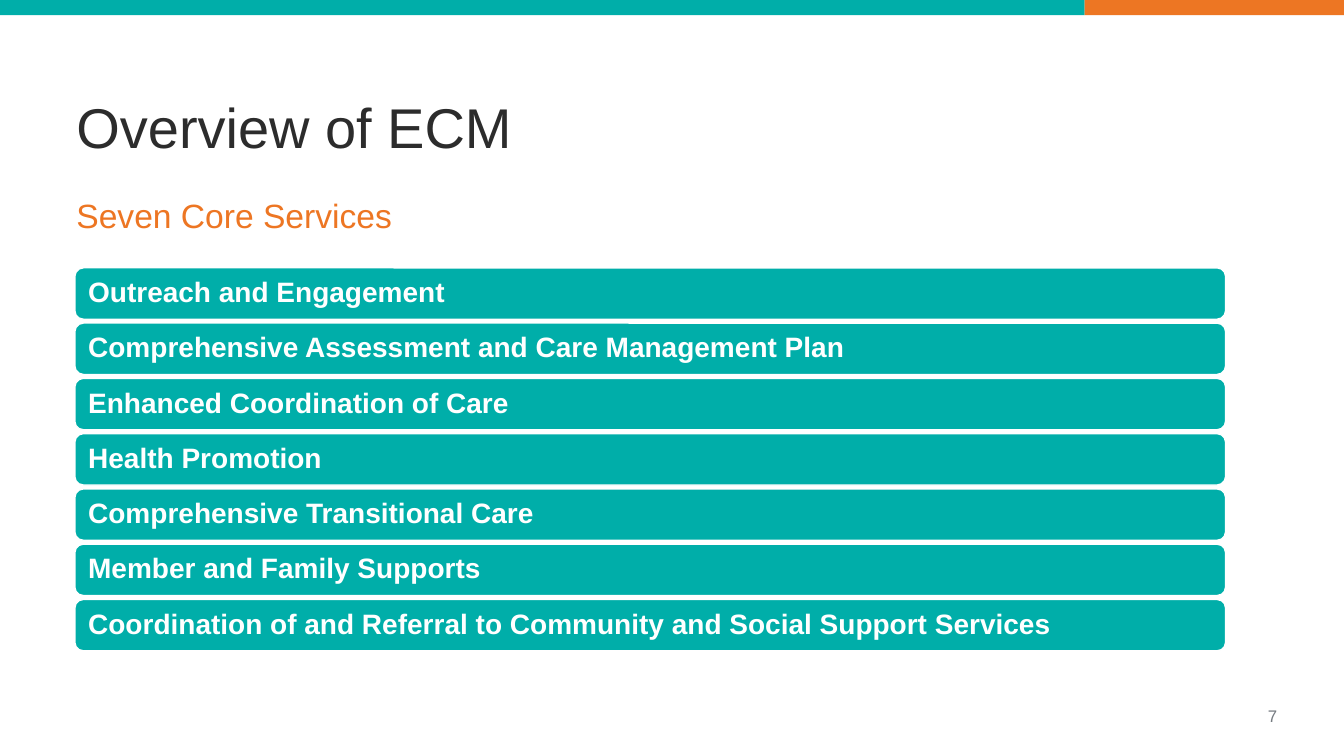
from pptx import Presentation
from pptx.dml.color import RGBColor
from pptx.enum.shapes import MSO_SHAPE
from pptx.enum.text import MSO_ANCHOR, PP_ALIGN
from pptx.util import Pt

TITLE = "Overview of ECM"
SUBTITLE = "Seven Core Services"
PAGE_NUMBER = "7"
SERVICES = [
    "Outreach and Engagement",
    "Comprehensive Assessment and Care Management Plan",
    "Enhanced Coordination of Care",
    "Health Promotion",
    "Comprehensive Transitional Care",
    "Member and Family Supports",
    "Coordination of and Referral to Community and Social Support Services",
]
COLOURS = {
    "teal": "00AEA9",
    "orange": "ED7623",
    "ink": "2C2C2C",
    "grey": "757B81",
    "white": "FFFFFF",
}
PAGE_WIDTH, PAGE_HEIGHT = 960, 540
BAND_SPLIT, BAND_HEIGHT = 774.8, 10.8
BAR_LEFT, BAR_TOP, BAR_WIDTH, BAR_HEIGHT = 53.5, 191.3, 822, 36.7
BAR_PITCH = 39.48


def colour(name):
    return RGBColor.from_string(COLOURS[name])


def add_block(page, preset, place, fill):
    block = page.shapes.add_shape(preset, *map(Pt, place))
    block.shadow.inherit = False
    block.fill.solid()
    block.fill.fore_color.rgb = colour(fill)
    block.line.fill.background()
    return block


def write(box, text, size, ink, align=PP_ALIGN.LEFT, anchor=MSO_ANCHOR.MIDDLE, bold=False):
    frame = box.text_frame
    frame.word_wrap = True
    frame.vertical_anchor = anchor
    para = frame.paragraphs[0]
    para.text = text
    para.alignment = align
    para.font.name = "Arial"
    para.font.size = Pt(size)
    para.font.bold = bold
    para.font.color.rgb = colour(ink)
    return para


def add_label(page, place, *args, **options):
    write(page.shapes.add_textbox(*map(Pt, place)), *args, **options)


def add_service(page, index, service):
    place = (BAR_LEFT, BAR_TOP + index * BAR_PITCH, BAR_WIDTH, BAR_HEIGHT)
    bar = add_block(page, MSO_SHAPE.ROUNDED_RECTANGLE, place, "teal")
    bar.line.color.rgb = colour("white")
    bar.line.width = Pt(1)
    para = write(bar, service, 20, "white", bold=True)
    para.line_spacing = 0.9
    bar.text_frame.margin_left = Pt(7.7)


def main():
    deck = Presentation()
    deck.slide_width, deck.slide_height = Pt(PAGE_WIDTH), Pt(PAGE_HEIGHT)
    page = deck.slides.add_slide(deck.slide_layouts[6])

    add_block(page, MSO_SHAPE.RECTANGLE, (0, 0, BAND_SPLIT, BAND_HEIGHT), "teal")
    orange_place = (BAND_SPLIT, 0, PAGE_WIDTH - BAND_SPLIT, BAND_HEIGHT)
    add_block(page, MSO_SHAPE.RECTANGLE, orange_place, "orange")
    add_label(page, (875.5, 500.4, 67, 28.8), PAGE_NUMBER, 12, "grey",
              align=PP_ALIGN.CENTER, anchor=MSO_ANCHOR.TOP)

    for index, service in enumerate(SERVICES):
        add_service(page, index, service)

    add_label(page, (47.5, 123.1, 828, 61.2), SUBTITLE, 24, "orange")
    add_label(page, (47.5, 38.2, 828, 104.4), TITLE, 40, "ink")
    deck.save("out.pptx")


if __name__ == "__main__":
    main()
